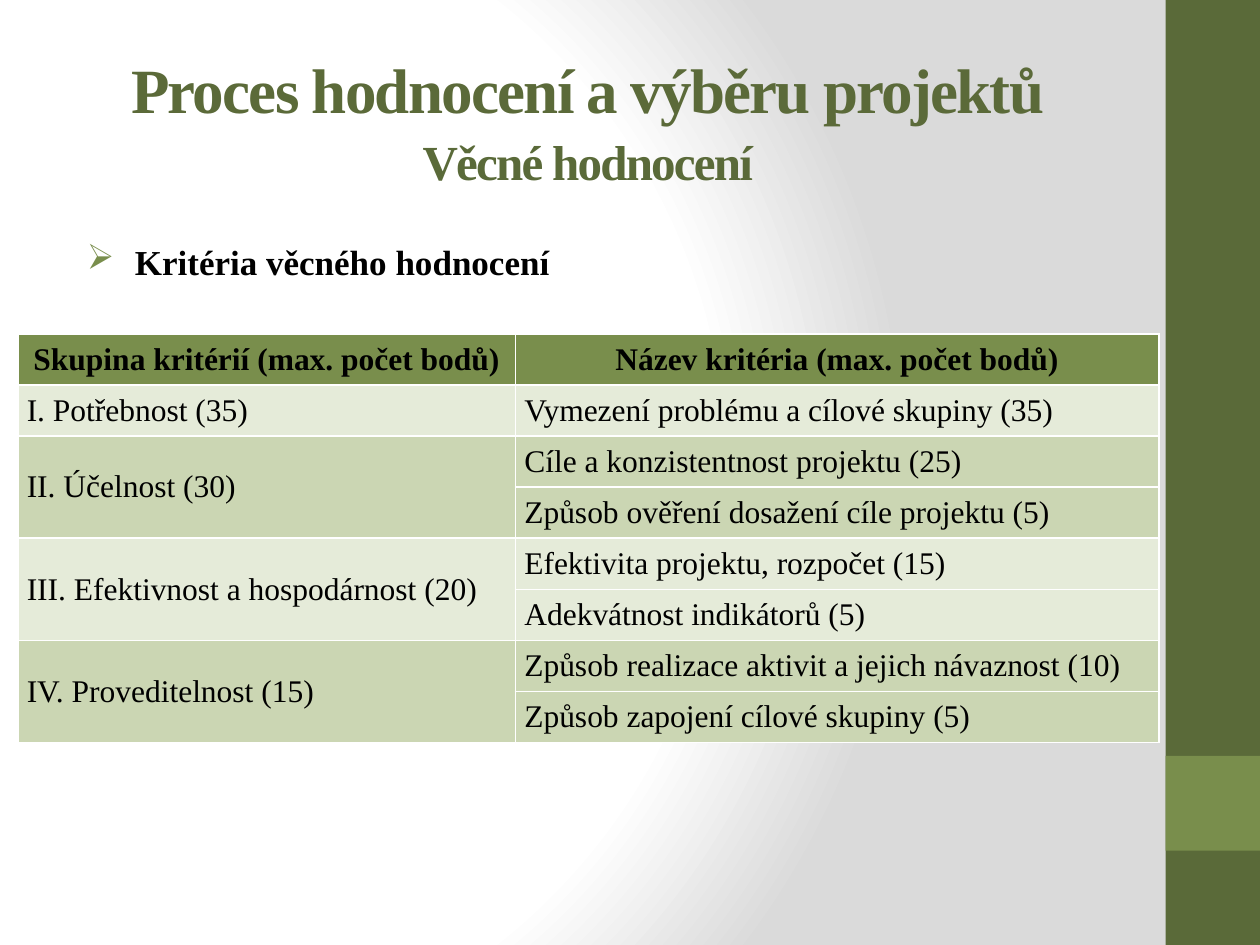
from pptx import Presentation
from pptx import util as u
from pptx.dml.color import RGBColor
from pptx.enum import shapes, text
from pptx.oxml import parse_xml
from pptx.oxml.ns import nsdecls

DARK_GREEN, GREEN = "5A6A39", "798E4C"
PALE, LIGHT = "E5EBD9", "CBD6B3"


def color(value):
    return RGBColor.from_string(value)


def add_span(para, words, shade, **font_values):
    span = para.add_run()
    span.text = words
    span.font.color.rgb = color(shade)
    for name, value in {"name": "Times New Roman", **font_values}.items():
        setattr(span.font, name, value)
    return span


deck = Presentation()
deck.slide_width, deck.slide_height = u.Cm(25.4), u.Cm(19.05)
page = deck.slides.add_slide(deck.slide_layouts[5])

# Background: white glow fading to grey
stops = "".join(
    f'<a:gs pos="{position * 1000}"><a:srgbClr val="{shade}"/></a:gs>'
    for position, shade in ((0, "FFFFFF"), (75, "FFFFFF"), (100, "DADADA"))
)
page.element.cSld.insert(0, parse_xml(
    f'<p:bg {nsdecls("p", "a")}><p:bgPr><a:gradFill rotWithShape="1">'
    f'<a:gsLst>{stops}</a:gsLst><a:path path="circle">'
    '<a:fillToRect l="20000" t="50000" r="100000" b="50000"/></a:path>'
    '</a:gradFill><a:effectLst/></p:bgPr></p:bg>'
))

# Side band with its lighter square
for top, height, shade in ((0, 19.05, DARK_GREEN), (15.24, 1.91, GREEN)):
    band = page.shapes.add_shape(shapes.MSO_SHAPE.RECTANGLE, u.Cm(23.5),
                                 u.Cm(top), u.Cm(1.9), u.Cm(height))
    band.shadow.inherit = False
    band.fill.solid()
    band.fill.fore_color.rgb = color(shade)
    band.line.fill.background()

# Title
title = page.shapes.title
title_box = {"left": 1.27, "top": 0.76, "width": 21.16, "height": 3.18}
for name, value in title_box.items():
    setattr(title, name, u.Cm(value))
title.text_frame.vertical_anchor = text.MSO_ANCHOR.MIDDLE
para = title.text_frame.paragraphs[0]
para.alignment = text.PP_ALIGN.CENTER
para.line_spacing = 1.1
heading = add_span(para, "Proces hodnocení a výběru projektů", "5B6A39",
                   size=u.Pt(36), bold=True)
para.add_line_break()
subheading = add_span(para, "Věcné hodnocení", DARK_GREEN, size=u.Pt(28), bold=True)
for span in (heading, subheading):
    span.font._element.set("spc", "-100")

# Bulleted lead-in
box = page.shapes.add_textbox(u.Cm(1.5), u.Cm(4.72), u.Cm(20.4), u.Cm(11.84))
box.text_frame.word_wrap = True
para = box.text_frame.paragraphs[0]
para.space_before = u.Pt(4)
add_span(para, "Kritéria věcného hodnocení", "000000", size=u.Pt(20), bold=True)
layout = para._p.get_or_add_pPr()
layout.set("marL", str(u.Cm(0.97)))
layout.set("indent", str(u.Cm(-0.97)))
for bullet in (f'<a:buClr {nsdecls("a")}><a:srgbClr val="{GREEN}"/></a:buClr>',
               f'<a:buChar {nsdecls("a")} char="➢"/>'):
    layout.append(parse_xml(bullet))

# Criteria table: each group spans the rows of its criteria
header = ("Skupina kritérií (max. počet bodů)", "Název kritéria (max. počet bodů)")
groups = [
    ("I. Potřebnost (35)", ["Vymezení problému a cílové skupiny (35)"]),
    ("II. Účelnost (30)", ["Cíle a konzistentnost projektu (25)",
                           "Způsob ověření dosažení cíle projektu (5)"]),
    ("III. Efektivnost a hospodárnost (20)", ["Efektivita projektu, rozpočet (15)",
                                              "Adekvátnost indikátorů (5)"]),
    ("IV. Proveditelnost (15)", ["Způsob realizace aktivit a jejich návaznost (10)",
                                 "Způsob zapojení cílové skupiny (5)"]),
]
rows = [(*header, GREEN)]
merges = []
for index, (group, criteria) in enumerate(groups):
    merges.append((len(rows), len(rows) + len(criteria) - 1))
    for order, criterion in enumerate(criteria):
        rows.append((group if order == 0 else "", criterion, (PALE, LIGHT)[index % 2]))

table = page.shapes.add_table(len(rows), 2, u.Cm(0.36), u.Cm(6.73),
                              u.Cm(23), u.Cm(8.23)).table
for column, width in zip(table.columns, (10.03, 12.97)):
    column.width = u.Cm(width)
for row in table.rows:
    row.height = u.Cm(1.03)
table.rows[len(rows) - 1].height = u.Cm(0.97)

cell_format = {"vertical_anchor": text.MSO_ANCHOR.MIDDLE,
               "margin_left": u.Cm(0.18), "margin_right": u.Cm(0.18),
               "margin_top": u.Cm(0.13), "margin_bottom": u.Cm(0.13)}
for row_index, (*words, shade) in enumerate(rows):
    for column_index, entry in enumerate(words):
        cell = table.cell(row_index, column_index)
        for name, value in cell_format.items():
            setattr(cell, name, value)
        cell.fill.solid()
        cell.fill.fore_color.rgb = color(shade)
        para = cell.text_frame.paragraphs[0]
        if row_index == 0:
            para.alignment = text.PP_ALIGN.CENTER
        if entry:
            add_span(para, entry, "000000", size=u.Pt(18), bold=row_index == 0)
for first, last in merges:
    if last > first:
        table.cell(first, 0).merge(table.cell(last, 0))

deck.save("out.pptx")
